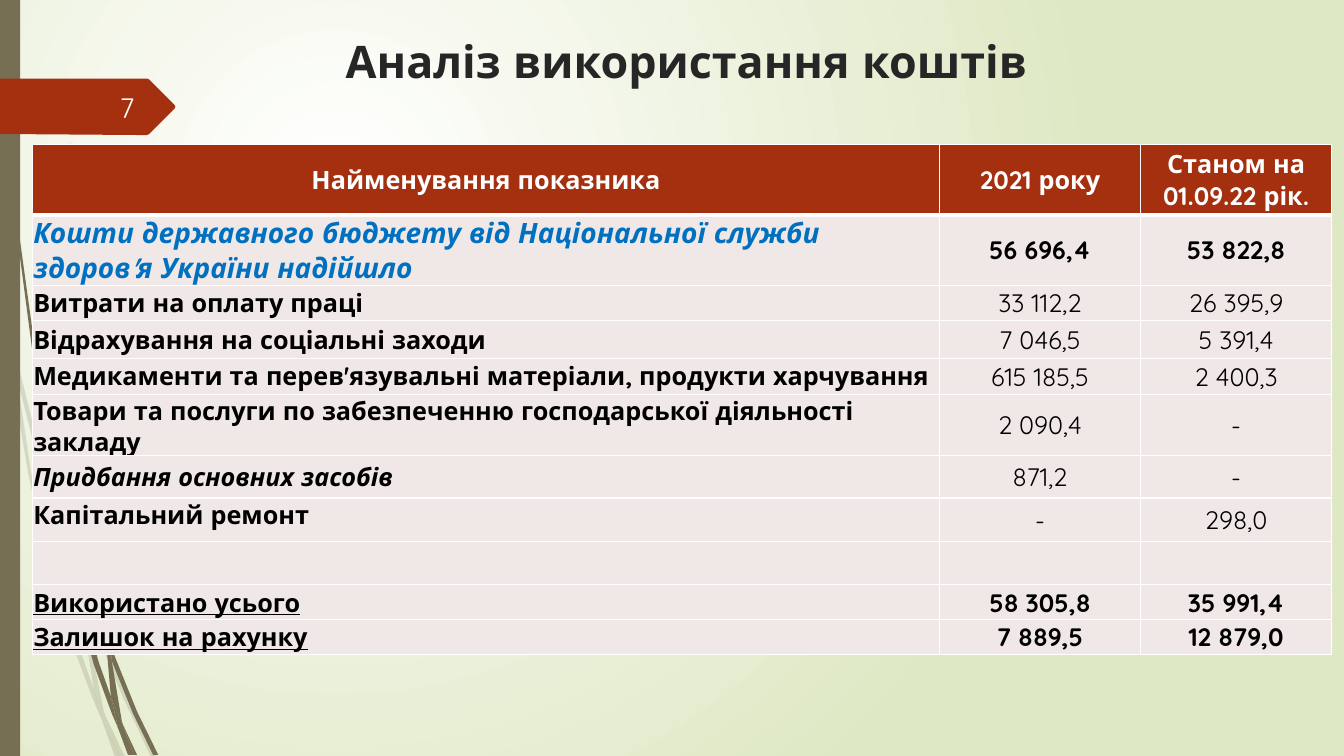
from dataclasses import dataclass

from lxml.etree import SubElement
from pptx import Presentation
from pptx.dml.color import RGBColor
from pptx.enum.shapes import MSO_SHAPE
from pptx.enum.text import MSO_ANCHOR, PP_ALIGN
from pptx.oxml import parse_xml
from pptx.oxml.ns import nsdecls, qn

PX = 9144  # EMU, a hundredth of an inch


@dataclass(frozen=True)
class Theme:
    font: str = "Quicksand"
    light: str = "FFFFFF"
    meadow: str = "DFE8C4"
    stem: str = "766F54"
    accent: str = "A53010"
    row: str = "F0E8E7"
    title: str = "262626"
    income: str = "0070C0"
    ink: str = "000000"
    number: str = "FEFFFF"
    title_size: int = 32
    large_size: int = 20
    body_size: int = 18


THEME = Theme()

PALE_WISPS = [
    [(11, 350), (9, 322), (0, 282), (0, 299), (10, 344)],
    [(58, 522), (84, 599), (85, 586), (62, 520), (36, 434), (14, 345), (17, 376), (36, 450)],
    [(92, 607), (88, 596), (88, 610), (123, 694), (150, 751), (155, 751), (127, 692)],
    [(119, 751), (124, 751), (105, 711)],
    [(93, 683), (70, 619), (48, 545), (31, 469), (17, 376), (11, 350), (18, 410), (28, 470),
     (45, 546), (65, 621), (92, 693), (101, 714), (99, 707)],
    [(84, 599), (87, 646), (93, 683), (96, 692), (105, 711), (103, 706), (91, 646), (88, 610),
     (88, 608)],
    [(88, 584), (92, 522), (110, 462), (160, 349), (229, 245), (268, 198), (312, 154), (312, 153),
     (268, 197), (228, 244), (158, 348), (107, 461), (89, 521), (85, 584), (85, 586), (88, 596)],
    [(101, 714), (114, 751), (119, 751)],
    [(88, 608), (88, 610), (88, 596), (85, 586), (84, 599)],
    [(96, 692), (93, 683), (99, 707), (101, 714), (119, 751), (105, 711)],
]

DARK_WISPS = [
    [(7, 110), (17, 233), (33, 355), (56, 477), (57, 481), (55, 457), (55, 453), (36, 355),
     (19, 232), (8, 109), (5, 48), (4, 0), (3, 0), (4, 48)],
    [(88, 592), (106, 645), (106, 631), (93, 590), (75, 532), (60, 472), (64, 505), (75, 549)],
    [(113, 649), (110, 641), (111, 656), (132, 708), (152, 749), (157, 749), (136, 706)],
    [(110, 691), (98, 657), (84, 607), (72, 556), (64, 505), (57, 477), (68, 557), (79, 608),
     (93, 659), (111, 708), (117, 722), (116, 717)],
    [(60, 472), (58, 453), (54, 349), (58, 245), (63, 193), (70, 141), (62, 193), (56, 245),
     (52, 349), (55, 449)],
    [(133, 749), (136, 749), (122, 719)],
    [(57, 477), (64, 505), (60, 472), (55, 449), (55, 453)],
    [(111, 633), (125, 552), (158, 476), (205, 406), (231, 374), (261, 344), (260, 344), (231, 373),
     (204, 405), (156, 474), (122, 551), (110, 591), (106, 631), (110, 641)],
    [(117, 722), (127, 749), (131, 749)],
    [(106, 645), (110, 691), (116, 706), (122, 719), (121, 716), (111, 656), (109, 651)],
    [(106, 645), (109, 651), (111, 656), (110, 641), (106, 631)],
    [(116, 706), (110, 691), (116, 717), (117, 722), (130, 749), (133, 749), (122, 719)],
]

BADGE = [(0, 78), (146, 78), (148, 79), (173, 104), (174, 106), (173, 108), (148, 133), (146, 134),
         (136, 134), (0, 133)]

COLUMN_WIDTHS = [900, 199, 190]
HEADER = ["Найменування показника", "2021 року", "Станом на 01.09.22 рік."]
HEADER_HEIGHT = 70
TOP = {"anchor": MSO_ANCHOR.TOP}
TOTAL = {"underline": True}

# height, name, 2021, 2022, figures in bold, format of the name
BUDGET_ROWS = [
    (70, "Кошти державного бюджету від Національної служби здоров'я України надійшло",
     "56 696,4", "53 822,8", True,
     {"italic": True, "color": THEME.income, "size": THEME.large_size}),
    (35, "Витрати на оплату праці", "33 112,2", "26 395,9", False, {}),
    (38, "Відрахування на соціальні заходи", "7 046,5", "5 391,4", False, {}),
    (35, "Медикаменти та перев'язувальні матеріали, продукти харчування",
     "615 185,5", "2 400,3", False, TOP),
    (35, "Товари та послуги по забезпеченню господарської діяльності закладу",
     "2 090,4", "-", False, TOP),
    (42, "Придбання основних засобів", "871,2", "-", False, {"italic": True}),
    (43, "Капітальний ремонт", "-", "298,0", False, TOP),
    (43, "", "", "", False, {}),
    (35, "Використано усього", "58 305,8", "35 991,4", True, TOTAL),
    (34, "Залишок на рахунку", "7 889,5", "12 879,0", True, TOTAL),
]


def write(holder, text, size=THEME.body_size, color=THEME.ink, bold=False, italic=False,
          underline=False, align=PP_ALIGN.LEFT, anchor=MSO_ANCHOR.MIDDLE, margins=(1, 1, 1, 0)):
    """Fill a table cell or a text frame with one formatted paragraph."""
    holder.vertical_anchor = anchor
    holder.margin_left, holder.margin_top, holder.margin_right, holder.margin_bottom = (
        margin * PX for margin in margins)
    paragraph = getattr(holder, "text_frame", holder).paragraphs[0]
    paragraph.alignment = align
    if not text:
        paragraph.font.size = size * 12700
        return
    run = paragraph.add_run()
    run.text = text
    font = run.font
    font.name, font.size = THEME.font, size * 12700
    font.bold, font.italic, font.underline = bold, italic, underline
    font.color.rgb = RGBColor.from_string(color)


def add_label(slide, box, text, **style):
    frame = slide.shapes.add_textbox(*(length * PX for length in box)).text_frame
    frame.word_wrap = True
    write(frame, text, **style)


def paint(shape, color, opacity=100):
    shape.shadow.inherit = False
    shape.line.fill.background()
    shape.fill.solid()
    shape.fill.fore_color.rgb = RGBColor.from_string(color)
    if opacity < 100:
        tint = shape.fill._xPr.find(qn("a:solidFill"))[0]
        SubElement(tint, qn("a:alpha")).set("val", str(opacity * 1000))


def add_outline(shapes, points, color, opacity=100):
    builder = shapes.build_freeform(*points[0], scale=PX)
    builder.add_line_segments(points[1:], close=True)
    paint(builder.convert_to_shape(), color, opacity)


def add_wisps(slide, wisps, opacity):
    group = slide.shapes.add_group_shape()
    for points in wisps:
        add_outline(group.shapes, points, THEME.stem, opacity)


def set_background(slide):
    fill = slide.background.fill
    fill.gradient()
    for stop, color in zip(fill.gradient_stops, (THEME.light, THEME.meadow)):
        stop.color.rgb = RGBColor.from_string(color)
    gradient = slide.element.find(".//" + qn("a:gradFill"))
    gradient.replace(gradient.find(qn("a:lin")), parse_xml(
        f'<a:path {nsdecls("a")} path="circle">'
        '<a:fillToRect l="50000" t="50000" r="100000" b="100000"/></a:path>'))


def finish_cell(cell, fill, bottom=1):
    """Set the fill and the white borders, in points."""
    cell.fill.solid()
    cell.fill.fore_color.rgb = RGBColor.from_string(fill)
    properties = cell._tc.get_or_add_tcPr()
    for place, (side, width) in enumerate(zip("LRTB", (1, 1, 1, bottom))):
        properties.insert(place, parse_xml(
            f'<a:ln{side} {nsdecls("a")} w="{width * 12700}"><a:solidFill>'
            f'<a:srgbClr val="{THEME.light}"/></a:solidFill></a:ln{side}>'))


def add_budget_table(slide):
    heights = [HEADER_HEIGHT] + [row[0] for row in BUDGET_ROWS]
    table = slide.shapes.add_table(
        len(heights), len(COLUMN_WIDTHS), 32 * PX, 143 * PX,
        sum(COLUMN_WIDTHS) * PX, sum(heights) * PX).table
    for column, width in zip(table.columns, COLUMN_WIDTHS):
        column.width = width * PX
    for row, height in zip(table.rows, heights):
        row.height = height * PX
    for column, heading in enumerate(HEADER):
        cell = table.cell(0, column)
        write(cell, heading, color=THEME.light, bold=True, align=PP_ALIGN.CENTER)
        finish_cell(cell, THEME.accent, bottom=3)
    for index, (_, name, before, now, strong, style) in enumerate(BUDGET_ROWS, 1):
        write(table.cell(index, 0), name, bold=True, **style)
        for column, figure in enumerate((before, now), 1):
            write(table.cell(index, column), figure, bold=strong, align=PP_ALIGN.CENTER)
        for cell in table.rows[index].cells:
            finish_cell(cell, THEME.row)


def main():
    deck = Presentation()
    deck.slide_width, deck.slide_height = 1333 * PX, 750 * PX
    slide = deck.slides.add_slide(deck.slide_layouts[6])
    set_background(slide)
    add_wisps(slide, PALE_WISPS, 20)
    add_wisps(slide, DARK_WISPS, 100)
    paint(slide.shapes.add_shape(MSO_SHAPE.RECTANGLE, 0, 0, 20 * PX, 750 * PX), THEME.stem)
    add_outline(slide.shapes, BADGE, THEME.accent)
    add_label(slide, (41, 30, 1280, 58), "Аналіз використання коштів", size=THEME.title_size,
              color=THEME.title, bold=True, align=PP_ALIGN.CENTER, anchor=MSO_ANCHOR.TOP,
              margins=(10, 3, 10, 3))
    add_label(slide, (58, 86, 85, 40), "7", size=THEME.large_size, color=THEME.number,
              align=PP_ALIGN.RIGHT, margins=(10, 5, 10, 5))
    add_budget_table(slide)
    deck.save("out.pptx")


if __name__ == "__main__":
    main()
